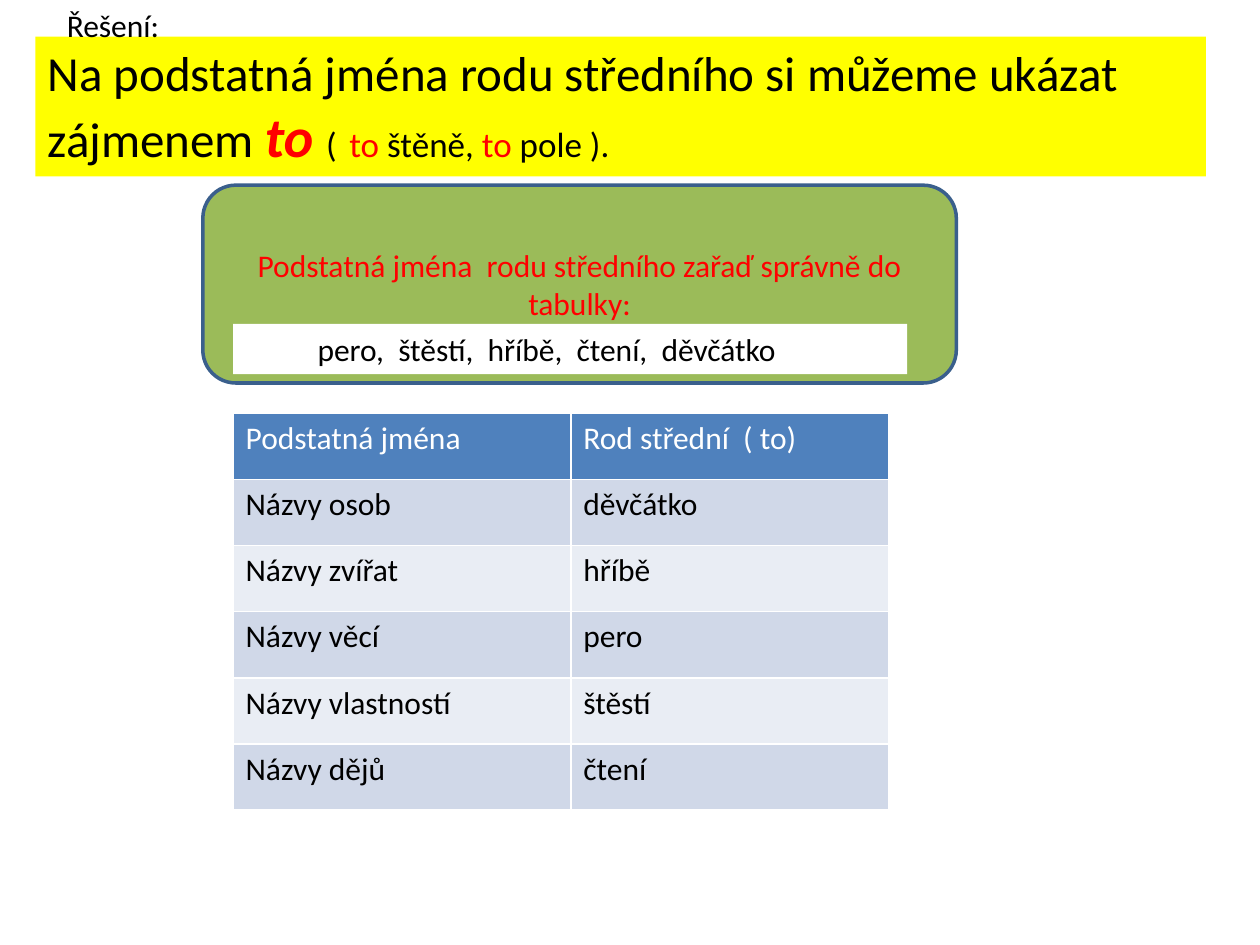
"""Builds a Czech grammar slide on neuter nouns with a sorted table."""
import pptx
import pptx.dml.color
import pptx.enum.shapes
import pptx.enum.text
import pptx.util

RGBColor = pptx.dml.color.RGBColor
Shape = pptx.enum.shapes.MSO_SHAPE
Align = pptx.enum.text.PP_ALIGN
Anchor = pptx.enum.text.MSO_ANCHOR

BLACK = RGBColor(0x00, 0x00, 0x00)
WHITE = RGBColor(0xFF, 0xFF, 0xFF)
RED = RGBColor(0xFF, 0x00, 0x00)
YELLOW = RGBColor(0xFF, 0xFF, 0x00)
GREEN = RGBColor(0x9B, 0xBB, 0x59)
OUTLINE = RGBColor(0x3A, 0x5F, 0x8C)
HEADER = RGBColor(0x4F, 0x81, 0xBD)
BANDS = (RGBColor(0xE9, 0xED, 0xF4), RGBColor(0xD0, 0xD8, 0xE8))

GRID_COLUMNS, GRID_ROWS = 100, 75


def add_text(para, text, size=18, color=BLACK, bold=False, italic=False):
    span = para.add_run()
    span.text = text
    font = span.font
    font.name, font.size = "Calibri", pptx.util.Pt(size)
    font.bold, font.italic = bold, italic
    font.color.rgb = color


class SlideBuilder:
    def __init__(self, deck):
        self.deck = deck
        self.page = deck.slides.add_slide(deck.slide_layouts[5])

    def place(self, left, top, width, height):
        column = self.deck.slide_width / GRID_COLUMNS
        row = self.deck.slide_height / GRID_ROWS
        return [round(n) for n in (left * column, top * row, width * column, height * row)]

    def frame(self, box, anchor=Anchor.TOP, align=Align.LEFT):
        text_frame = box.text_frame
        text_frame.word_wrap = True
        text_frame.auto_size = pptx.enum.text.MSO_AUTO_SIZE.NONE
        text_frame.vertical_anchor = anchor
        para = text_frame.paragraphs[0]
        para.alignment = align
        return para

    def title(self, area, text):
        box = self.page.shapes.title
        box.left, box.top, box.width, box.height = self.place(*area)
        add_text(self.frame(box), text)
        self.page.shapes._spTree.append(box._element)

    def box(self, area, fill, spans, kind=Shape.RECTANGLE, outline=None, indent=None, **layout):
        box = self.page.shapes.add_shape(kind, *self.place(*area))
        box.shadow.inherit = False
        box.fill.solid()
        box.fill.fore_color.rgb = fill
        if outline:
            box.line.color.rgb = outline
            box.line.width = pptx.util.Pt(2)
        else:
            box.line.fill.background()
        para = self.frame(box, **layout)
        if indent:
            box.text_frame.margin_left = pptx.util.Inches(indent)
        for text, style in spans:
            add_text(para, text, **style)

    def table(self, area, widths, rows):
        frame = self.page.shapes.add_table(len(rows), len(widths), *self.place(*area))
        table = frame.table
        for column, width in zip(table.columns, widths):
            column.width = self.place(width, 0, 0, 0)[0]
        for index, row in enumerate(rows):
            for cell, text in zip(table.rows[index].cells, row):
                cell.fill.solid()
                cell.fill.fore_color.rgb = BANDS[index % 2] if index else HEADER
                add_text(cell.text_frame.paragraphs[0], text, color=BLACK if index else WHITE)


def main():
    deck = pptx.Presentation()
    deck.slide_width, deck.slide_height = pptx.util.Inches(10), pptx.util.Inches(7.5)
    slide = SlideBuilder(deck)
    example, accent = {"size": 20}, {"size": 20, "color": RED}
    slide.box((2.8, 2.9, 92.9, 11.1), YELLOW, [
        ("Na podstatná jména rodu středního si můžeme ukázat zájmenem ", {"size": 28}),
        ("to ", {"size": 32, "color": RED, "bold": True, "italic": True}),
        ("(", example),
        (" ", {"size": 32}),
        ("to ", accent),
        ("štěně, ", example),
        ("to ", accent),
        ("pole ).", example),
    ])
    slide.box((16.1, 14.7, 59.8, 15.7), GREEN,
              [("Podstatná jména  rodu středního zařaď správně do tabulky:", {"color": RED})],
              kind=Shape.ROUNDED_RECTANGLE, outline=OUTLINE,
              anchor=Anchor.MIDDLE, align=Align.CENTER)
    slide.box((18.5, 25.7, 53.5, 4), WHITE,
              [("pero,  štěstí,  hříbě,  čtení,  děvčátko", {})], indent=0.67)
    slide.table((18.5, 32.8, 52, 31.5), (26.8, 25.2), [
        ("Podstatná jména", "Rod střední  ( to)"),
        ("Názvy osob", "děvčátko"),
        ("Názvy zvířat", "hříbě"),
        ("Názvy věcí", "pero"),
        ("Názvy vlastností", "štěstí"),
        ("Názvy dějů", "čtení"),
    ])
    slide.title((4.3, 0, 25.2, 7.1), "Řešení:")
    deck.save("out.pptx")


if __name__ == "__main__":
    main()
